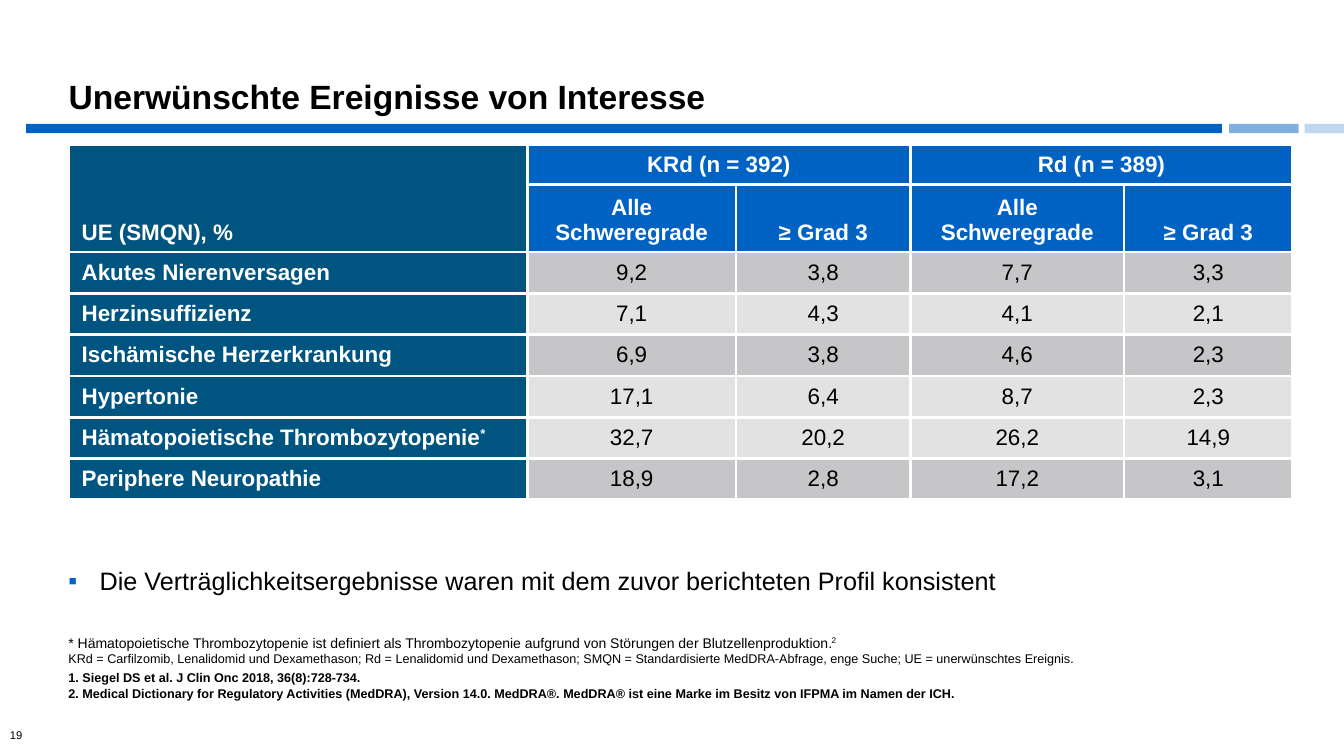
from dataclasses import dataclass

from lxml import etree
from pptx import Presentation
from pptx.dml.color import RGBColor
from pptx.enum.shapes import MSO_SHAPE
from pptx.enum.text import MSO_ANCHOR, MSO_AUTO_SIZE, PP_ALIGN
from pptx.oxml.ns import qn
from pptx.util import Inches, Pt

RECT = MSO_SHAPE.RECTANGLE
TOP, MIDDLE, BOTTOM = MSO_ANCHOR.TOP, MSO_ANCHOR.MIDDLE, MSO_ANCHOR.BOTTOM
LEFT, CENTER = PP_ALIGN.LEFT, PP_ALIGN.CENTER
NO_FIT = MSO_AUTO_SIZE.NONE


@dataclass(frozen=True)
class Theme:
    font: str = "Arial"
    black: str = "000000"
    white: str = "FFFFFF"
    blue: str = "0063C3"
    teal: str = "005480"
    dark_grey: str = "C6C5C7"
    light_grey: str = "E3E2E3"
    title: int = 24
    body: int = 18
    table: int = 16
    note: int = 10
    source: int = 9
    page: int = 8
    border: float = 2.25


class SlideBuilder:
    def __init__(self, prs, theme):
        self.theme = theme
        self.s = prs.slides.add_slide(prs.slide_layouts[5])

    def add_runs(self, p, runs, size, color=None, **formats):
        """Fill a paragraph with runs given as (text, font overrides)."""
        for name, value in formats.items():
            setattr(p, name, value)
        for text, extra in runs:
            r = p.add_run()
            r.text = text
            values = {"name": self.theme.font, "size": Pt(size), "bold": False, **extra}
            raised = values.pop("raised", False)
            for name, value in values.items():
                setattr(r.font, name, value)
            r.font.color.rgb = RGBColor.from_string(color or self.theme.black)
            if raised:
                r._r.get_or_add_rPr().set("baseline", "30000")

    def frame(self, sp, anchor):
        tf = sp.text_frame
        values = {"word_wrap": True, "auto_size": NO_FIT, "vertical_anchor": anchor,
                  "margin_left": Inches(0.1), "margin_right": Inches(0.1),
                  "margin_top": Inches(0.05), "margin_bottom": Inches(0.05)}
        for name, value in values.items():
            setattr(tf, name, value)
        return tf

    def title(self, text, box):
        sp = self.s.shapes.title
        for name, value in zip(("left", "top", "width", "height"), box):
            setattr(sp, name, Inches(value))
        tf = self.frame(sp, BOTTOM)
        self.add_runs(tf.paragraphs[0], [(text, {"bold": True})], self.theme.title,
                      alignment=LEFT, line_spacing=0.9)

    def text_box(self, box, anchor=TOP):
        return self.frame(self.s.shapes.add_textbox(*map(Inches, box)), anchor)

    def bullet(self, p):
        pPr = p._p.get_or_add_pPr()
        pPr.set("marL", str(Inches(0.31)))
        pPr.set("indent", str(-Inches(0.31)))
        color = etree.SubElement(pPr, qn("a:buClr"))
        etree.SubElement(color, qn("a:srgbClr"), val=self.theme.blue)
        etree.SubElement(pPr, qn("a:buFont"), typeface=self.theme.font)
        etree.SubElement(pPr, qn("a:buChar"), char="▪")

    def bar(self, box, opacity):
        sp = self.s.shapes.add_shape(RECT, *map(Inches, box))
        sp.shadow.inherit = False
        sp.line.fill.background()
        sp.fill.solid()
        sp.fill.fore_color.rgb = RGBColor.from_string(self.theme.blue)
        if opacity < 100:
            color = sp._element.spPr.find(".//" + qn("a:srgbClr"))
            etree.SubElement(color, qn("a:alpha"), val=str(opacity * 1000))

    def table(self, box, widths, heights):
        tbl = self.s.shapes.add_table(len(heights), len(widths), *map(Inches, box)).table
        tbl.first_row = tbl.horz_banding = False
        for column, width in zip(tbl.columns, widths):
            column.width = Inches(width)
        for row, height in zip(tbl.rows, heights):
            row.height = Inches(height)
            for cell in row.cells:
                self.borders(cell)
        return tbl

    def borders(self, cell):
        tcPr = cell._tc.get_or_add_tcPr()
        for side in ("lnL", "lnR", "lnT", "lnB"):
            line = etree.SubElement(tcPr, qn("a:" + side), w=str(Pt(self.theme.border)))
            fill = etree.SubElement(line, qn("a:solidFill"))
            etree.SubElement(fill, qn("a:srgbClr"), val=self.theme.white)

    def cell(self, cell, runs, fill, color, bold=True, align=CENTER, anchor=MIDDLE, side=0.13):
        values = {"vertical_anchor": anchor,
                  "margin_left": Inches(side), "margin_right": Inches(side),
                  "margin_top": Inches(0.07), "margin_bottom": Inches(0.07)}
        for name, value in values.items():
            setattr(cell, name, value)
        cell.fill.solid()
        cell.fill.fore_color.rgb = RGBColor.from_string(fill)
        runs = [(text, {"bold": bold, **extra}) for text, extra in runs]
        self.add_runs(cell.text_frame.paragraphs[0], runs, self.theme.table, color,
                      alignment=align)


def add_events_table(b):
    t = b.theme
    events = [
        ("Akutes Nierenversagen", "", t.dark_grey, "9,2 3,8 7,7 3,3"),
        ("Herzinsuffizienz", "", t.light_grey, "7,1 4,3 4,1 2,1"),
        ("Ischämische Herzerkrankung", "", t.dark_grey, "6,9 3,8 4,6 2,3"),
        ("Hypertonie", "", t.light_grey, "17,1 6,4 8,7 2,3"),
        ("Hämatopoietische Thrombozytopenie", "*", t.light_grey, "32,7 20,2 26,2 14,9"),
        ("Periphere Neuropathie", "", t.dark_grey, "18,9 2,8 17,2 3,1"),
    ]
    tbl = b.table((0.68, 1.43, 12.14, 3.53), (4.55, 2.07, 1.73, 2.12, 1.67),
                  [0.4, 0.67] + [0.41] * len(events))
    tbl.cell(0, 0).merge(tbl.cell(1, 0))
    b.cell(tbl.cell(0, 0), [("UE (SMQN), %", {})], t.teal, t.white, align=LEFT, anchor=BOTTOM)
    for col, group in ((1, "KRd (n = 392)"), (3, "Rd (n = 389)")):
        tbl.cell(0, col).merge(tbl.cell(0, col + 1))
        b.cell(tbl.cell(0, col), [(group, {})], t.blue, t.white, side=0.1)
        for offset, grade in enumerate(("Alle Schweregrade", "≥ Grad 3")):
            b.cell(tbl.cell(1, col + offset), [(grade, {})], t.blue, t.white, anchor=BOTTOM)
    for row, (event, mark, shade, rates) in enumerate(events, start=2):
        runs = [(event, {})] + ([(mark, {"raised": True})] if mark else [])
        b.cell(tbl.cell(row, 0), runs, t.teal, t.white, align=LEFT)
        for col, rate in enumerate(rates.split(), start=1):
            b.cell(tbl.cell(row, col), [(rate, {})], shade, t.black, bold=False)


def add_footnotes(b):
    t = b.theme
    tf = b.text_box((0.58, 6.23, 11.05, 0.77), BOTTOM)
    p = tf.paragraphs[0]
    b.add_runs(p, [("* Hämatopoietische Thrombozytopenie ist definiert als Thrombozytopenie "
                    "aufgrund von Störungen der Blutzellenproduktion.", {}),
                   ("2", {"raised": True})], t.note, space_after=Pt(3))
    p.add_line_break()
    b.add_runs(p, [("KRd = Carfilzomib, Lenalidomid und Dexamethason; Rd = Lenalidomid und "
                    "Dexamethason; SMQN = Standardisierte MedDRA-Abfrage, enge Suche; "
                    "UE = unerwünschtes Ereignis.", {})], t.source)
    for source in ("1. Siegel DS et al. J Clin Onc 2018, 36(8):728-734.",
                   "2. Medical Dictionary for Regulatory Activities (MedDRA), Version 14.0. "
                   "MedDRA®. MedDRA® ist eine Marke im Besitz von IFPMA im Namen der ICH."):
        b.add_runs(tf.add_paragraph(), [(source, {"bold": True})], t.source)


def main():
    prs = Presentation()
    prs.slide_width, prs.slide_height = Inches(13.33), Inches(7.5)
    b = SlideBuilder(prs, Theme())
    t = b.theme

    b.add_runs(b.text_box((0, 7.18, 0.67, 0.24)).paragraphs[0], [("19", {})], t.page)
    for left, width, opacity in ((0.26, 11.86, 100), (12.19, 0.69, 50), (12.94, 0.39, 25)):
        b.bar((left, 1.23, width, 0.09), opacity)
    add_events_table(b)
    b.title("Unerwünschte Ereignisse von Interesse", (0.58, 0, 12.25, 1.21))

    p = b.text_box((0.58, 5.56, 12.25, 0.86)).paragraphs[0]
    b.bullet(p)
    b.add_runs(p, [("Die Verträglichkeitsergebnisse waren mit dem zuvor berichteten "
                    "Profil konsistent", {})], t.body)
    add_footnotes(b)
    prs.save("out.pptx")


if __name__ == "__main__":
    main()
